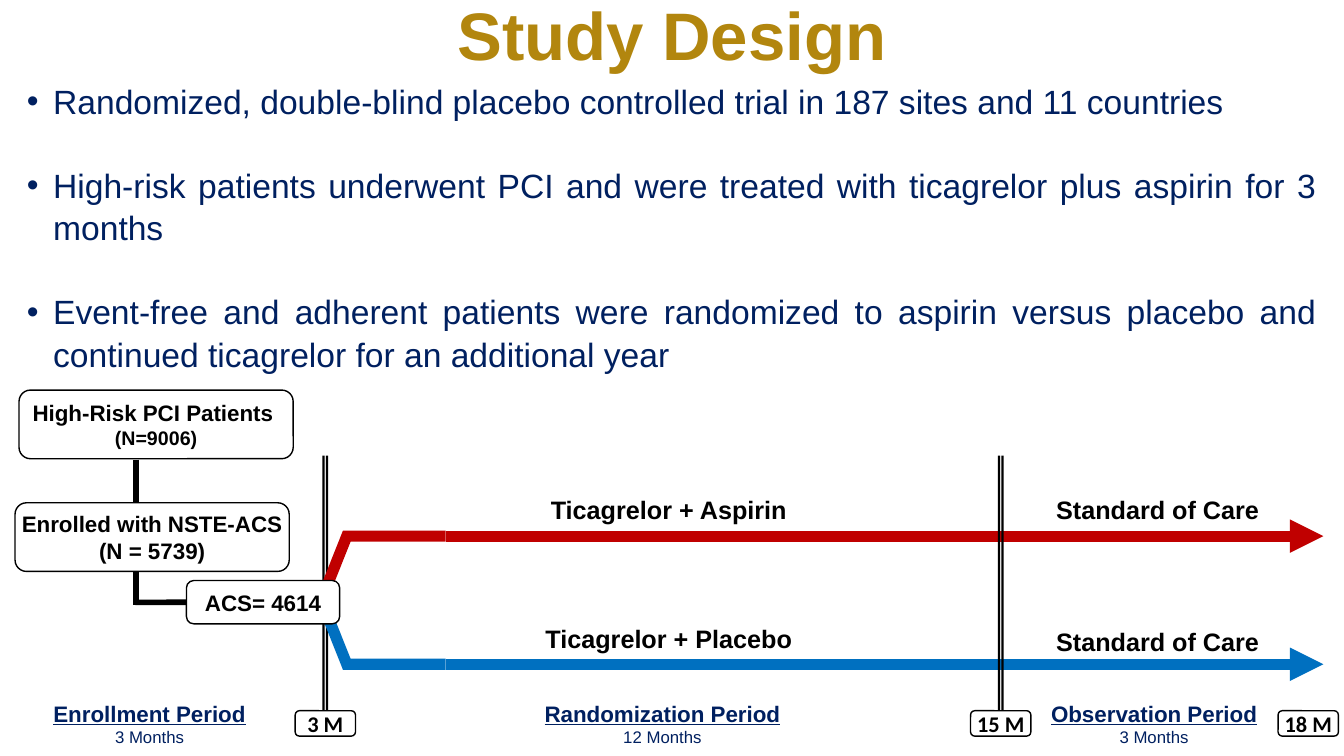
"""Build the study design slide with its trial flow diagram."""
from dataclasses import dataclass

from lxml import etree
from pptx import Presentation
from pptx.dml.color import RGBColor
from pptx.enum.shapes import MSO_CONNECTOR, MSO_SHAPE
from pptx.enum.text import MSO_ANCHOR, MSO_AUTO_SIZE, PP_ALIGN
from pptx.oxml.ns import qn
from pptx.util import Cm, Pt

STRAIGHT = MSO_CONNECTOR.STRAIGHT
ROUNDED = MSO_SHAPE.ROUNDED_RECTANGLE
EQUAL = MSO_SHAPE.MATH_EQUAL
MIDDLE = MSO_ANCHOR.MIDDLE
NO_FIT = MSO_AUTO_SIZE.NONE
CENTER, JUSTIFY = PP_ALIGN.CENTER, PP_ALIGN.JUSTIFY
LEFT_SIDE = 1


@dataclass(frozen=True)
class Theme:
    """Colours, fonts and type sizes of the slide."""
    gold: str = "B2860E"
    navy: str = "002060"
    black: str = "000000"
    white: str = "FFFFFF"
    red: str = "C00000"
    blue: str = "0070C0"
    font: str = "Arial"
    marker_font: str = "Calibri"
    title: int = 48
    body: int = 24
    arm: int = 18
    box: int = 16
    count: int = 14
    note: int = 12


class Deck:
    """Draws styled elements on the current slide, in centimetres."""

    def __init__(self, prs, theme):
        """Open a title-only slide."""
        self.t = theme
        self.s = prs.slides.add_slide(prs.slide_layouts[5])

    def run(self, p, text, size, color, bold=True, underline=False, font=None):
        """Add one formatted run to a paragraph."""
        r = p.add_run()
        r.text = text
        r.font.name = font or self.t.font
        r.font.size = Pt(size)
        r.font.bold = bold
        r.font.underline = underline
        r.font.color.rgb = RGBColor.from_string(color)

    def frame(self, sp, wrap=True, inset=0):
        """Prepare a text frame with middle anchoring."""
        tf = sp.text_frame
        tf.word_wrap = wrap
        tf.auto_size = NO_FIT
        tf.vertical_anchor = MIDDLE
        tf.margin_left = tf.margin_right = Cm(inset)
        tf.margin_top = tf.margin_bottom = Cm(inset / 2)
        return tf

    def lines(self, tf, rows):
        """Write centred paragraphs, each given as run options."""
        for i, row in enumerate(rows):
            p = tf.add_paragraph() if i else tf.paragraphs[0]
            p.alignment = CENTER
            self.run(p, **row)

    def title(self, text, x, y, w, h):
        """Place the title placeholder."""
        sp = self.s.shapes.title
        sp.left, sp.top, sp.width, sp.height = Cm(x), Cm(y), Cm(w), Cm(h)
        self.lines(self.frame(sp), [dict(text=text, size=self.t.title, color=self.t.gold)])

    def bullets(self, items, x, y, w, h):
        """Add a justified bullet list."""
        sp = self.s.shapes.add_textbox(Cm(x), Cm(y), Cm(w), Cm(h))
        tf = self.frame(sp, inset=0.25)
        for i, item in enumerate(items):
            p = tf.add_paragraph() if i else tf.paragraphs[0]
            p.alignment = JUSTIFY
            p.line_spacing = 1.05
            p.space_before, p.space_after = Pt(12), Pt(18)
            pPr = p._p.get_or_add_pPr()
            pPr.set("marL", str(Cm(0.66)))
            pPr.set("indent", str(-Cm(0.66)))
            etree.SubElement(pPr, qn("a:buFont"), typeface=self.t.font)
            etree.SubElement(pPr, qn("a:buChar"), char="•")
            self.run(p, item, self.t.body, self.t.navy, bold=False)

    def label(self, rows, x, y, w, h):
        """Add a free text label."""
        sp = self.s.shapes.add_textbox(Cm(x), Cm(y), Cm(w), Cm(h))
        self.lines(self.frame(sp), rows)

    def box(self, rows, x, y, w, h):
        """Add a rounded white box with text."""
        sp = self.s.shapes.add_shape(ROUNDED, Cm(x), Cm(y), Cm(w), Cm(h))
        sp.shadow.inherit = False
        sp.fill.solid()
        sp.fill.fore_color.rgb = RGBColor.from_string(self.t.white)
        self.stroke(sp.line, self.t.black, 1)
        self.lines(self.frame(sp, wrap=False), rows)
        return sp

    def stroke(self, line, color, width):
        """Set a line's colour and width."""
        line.color.rgb = RGBColor.from_string(color)
        line.width = Pt(width)

    def line(self, x1, y1, x2, y2, color, width, arrow=False):
        """Add a straight connector, optionally with an arrowhead."""
        c = self.s.shapes.add_connector(STRAIGHT, Cm(x1), Cm(y1), Cm(x2), Cm(y2))
        self.stroke(c.line, color, width)
        if arrow:
            etree.SubElement(c.line._get_or_add_ln(), qn("a:tailEnd"), type="triangle")
        etree.SubElement(c._element.spPr, qn("a:effectLst"))
        return c

    def arm(self, start_y, y, color):
        """Add a treatment arm: a bend followed by a long arrow."""
        fb = self.s.shapes.build_freeform(Cm(7.98), Cm(start_y))
        fb.add_line_segments([(Cm(8.74), Cm(y)), (Cm(11.23), Cm(y))], close=False)
        sp = fb.convert_to_shape()
        sp.shadow.inherit = False
        sp.fill.background()
        self.stroke(sp.line, color, 8)
        etree.SubElement(sp.line._get_or_add_ln(), qn("a:miter"), lim="800000")
        self.line(11.23, y, 33.35, y, color, 8, arrow=True)

    def divider(self, center):
        """Add a vertical double bar between two periods."""
        length, depth = 9.4, 0.25
        sp = self.s.shapes.add_shape(EQUAL, Cm(center - length / 2), Cm(14.81), Cm(length), Cm(depth))
        sp.rotation = 270
        sp.shadow.inherit = False
        sp.fill.solid()
        sp.fill.fore_color.rgb = RGBColor.from_string(self.t.black)
        sp.line.fill.background()

    def marker(self, text, center):
        """Add a month marker on the time axis."""
        row = dict(text=text, size=self.t.box, color=self.t.black, font=self.t.marker_font)
        self.box([row], center - 0.76, 17.91, 1.52, 0.64)


def main():
    """Compose and save the slide."""
    prs = Presentation()
    prs.slide_width, prs.slide_height = Cm(33.87), Cm(19.05)
    t = Theme()
    d = Deck(prs, t)
    d.title("Study Design", 0, -0.3, 33.87, 2.31)
    d.bullets([
        "Randomized, double-blind placebo controlled trial in 187 sites and 11 countries",
        "High-risk patients underwent PCI and were treated with ticagrelor plus aspirin for 3 months",
        "Event-free and adherent patients were randomized to aspirin versus placebo "
        "and continued ticagrelor for an additional year",
    ], 0.43, 1.57, 32.99, 8.26)

    def bold(text, size):
        """Return the options of a bold black run."""
        return dict(text=text, size=size, color=t.black)

    d.divider(8.2)
    d.line(3.43, 11.58, 3.43, 15.25, t.black, 4)
    d.arm(15.42, 13.51, t.red)
    d.arm(14.83, 16.74, t.blue)
    d.divider(25.22)
    for text, x, y, w in [
        ("Ticagrelor + Aspirin", 11.28, 12.34, 11.15),
        ("Ticagrelor + Placebo", 11.28, 15.6, 11.15),
        ("Standard of Care", 25.58, 12.34, 7.19),
        ("Standard of Care", 25.58, 15.67, 7.19),
    ]:
        d.label([bold(text, t.arm)], x, y, w, 0.99)

    d.box([bold("High-Risk PCI Patients ", t.box), bold("(N=9006)", t.count)], 0.48, 9.83, 6.91, 1.73)
    d.box([bold("Enrolled with NSTE-ACS", t.box), bold("(N = 5739)", t.box)], 0.38, 12.67, 6.91, 1.73)
    acs = d.box([bold("ACS= 4614", t.box)], 4.7, 14.63, 3.86, 1.09)
    d.line(3.41, 15.18, 4.7, 15.18, t.black, 4).end_connect(acs, LEFT_SIDE)

    for text, center in [("3 M", 8.2), ("15 M", 25.22), ("18 M", 32.97)]:
        d.marker(text, center)
    for name, span, x, w in [
        ("Enrollment Period", "3 Months", 0.94, 5.66),
        ("Randomization Period", "12 Months", 10.74, 11.91),
        ("Observation Period", "3 Months", 26.19, 5.79),
    ]:
        d.label([
            dict(text=name, size=t.box, color=t.navy, underline=True),
            dict(text=span, size=t.note, color=t.navy, bold=False),
        ], x, 17.5, w, 1.45)
    prs.save("out.pptx")


if __name__ == "__main__":
    main()
